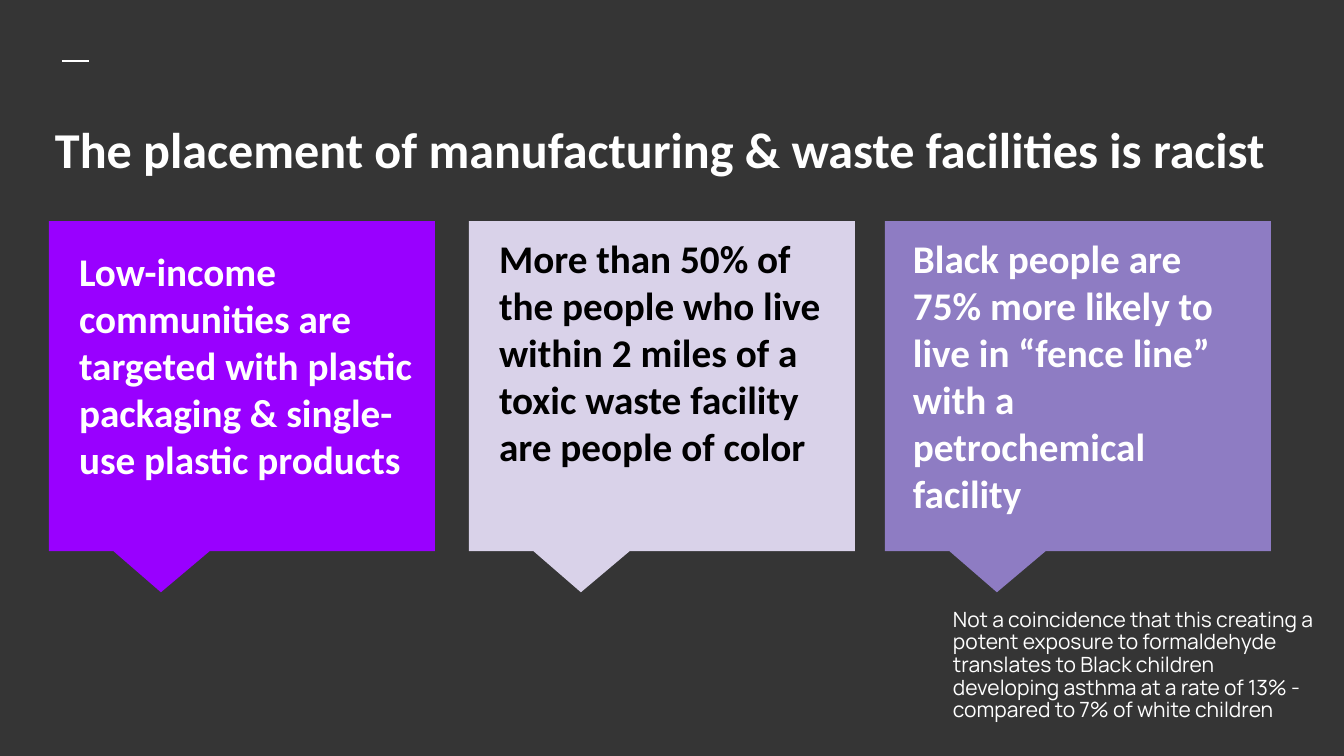
from lxml.etree import SubElement
from pptx import Presentation
from pptx.dml.color import RGBColor
from pptx.enum.shapes import MSO_CONNECTOR, MSO_SHAPE
from pptx.enum.text import MSO_ANCHOR, MSO_AUTO_SIZE, PP_ALIGN
from pptx.oxml.ns import qn
from pptx.util import Pt

PX = 914400 / 84
WHITE = RGBColor(0xFF, 0xFF, 0xFF)
BLACK = RGBColor(0x00, 0x00, 0x00)
CHARCOAL = RGBColor(0x35, 0x35, 0x35)
VIOLET = RGBColor(0x99, 0x00, 0xFF)
LAVENDER = RGBColor(0xD9, 0xD2, 0xE9)
PURPLE = RGBColor(0x8E, 0x7C, 0xC3)

TITLE = "The placement of manufacturing & waste facilities is racist"
CARDS = [
    (49, 66, 234, VIOLET, WHITE,
     "Low-income communities are targeted with plastic packaging & single-use plastic products"),
    (469, 486, 221, LAVENDER, BLACK,
     "More than 50% of the people who live within 2 miles of a toxic waste facility are people of color"),
    (885, 900, 221, PURPLE, WHITE,
     "Black people are 75% more likely to live in “fence line” with a petrochemical facility"),
]
NOTE = ("Not a coincidence that this creating a potent exposure to formaldehyde translates to "
        "Black children developing asthma at a rate of 13% - compared to 7% of white children")


def px(n):
    return round(n * PX)


def place(sp, x, y, w, h):
    sp.left, sp.top, sp.width, sp.height = px(x), px(y), px(w), px(h)


def write(sp, text, size, color, font="Calibri", bold=True, spacing=1.0):
    tf = sp.text_frame
    tf.word_wrap = True
    tf.auto_size = MSO_AUTO_SIZE.NONE
    tf.vertical_anchor = MSO_ANCHOR.TOP
    tf.margin_left = tf.margin_right = tf.margin_top = tf.margin_bottom = px(13)
    p = tf.paragraphs[0]
    p.alignment = PP_ALIGN.LEFT
    p.line_spacing = spacing
    p.space_before = Pt(0)
    r = p.add_run()
    r.text = text
    r.font.name = font
    r.font.size = Pt(size)
    r.font.bold = bold
    r.font.color.rgb = color


def add_text(s, x, y, w, h, text, size, color, **style):
    sp = s.shapes.add_textbox(px(x), px(y), px(w), px(h))
    write(sp, text, size, color, **style)


def add_callout(s, x, y, w, h, fill):
    sp = s.shapes.add_shape(MSO_SHAPE.RECTANGULAR_CALLOUT, px(x), px(y), px(w), px(h))
    sp.adjustments[0] = -0.21
    sp.adjustments[1] = 0.625
    sp.shadow.inherit = False
    sp.fill.solid()
    sp.fill.fore_color.rgb = fill
    sp.line.fill.background()


def add_rule(s, x1, x2, y):
    line = s.shapes.add_connector(MSO_CONNECTOR.STRAIGHT, px(x1), px(y), px(x2), px(y))
    line.line.color.rgb = WHITE
    line.line.width = Pt(1.5)
    SubElement(line._element.spPr, qn("a:effectLst"))


def main():
    prs = Presentation()
    prs.slide_width, prs.slide_height = px(1344), px(756)
    s = prs.slides.add_slide(prs.slide_layouts[5])
    s.background.fill.solid()
    s.background.fill.fore_color.rgb = CHARCOAL

    add_rule(s, 62, 89, 61)
    title = s.shapes.title
    place(title, 42, 105, 1267, 150)
    write(title, TITLE, 43, WHITE)

    for x, *_, fill, _, _ in CARDS:
        add_callout(s, x, 221, 386, 330, fill)
    for _, x, y, _, color, text in CARDS:
        add_text(s, x, y, 365, 295, text, 33.6, color)

    add_text(s, 940, 596, 395, 126, NOTE, 18, WHITE, font="Manrope", bold=False, spacing=0.9)
    prs.save("out.pptx")


if __name__ == "__main__":
    main()
